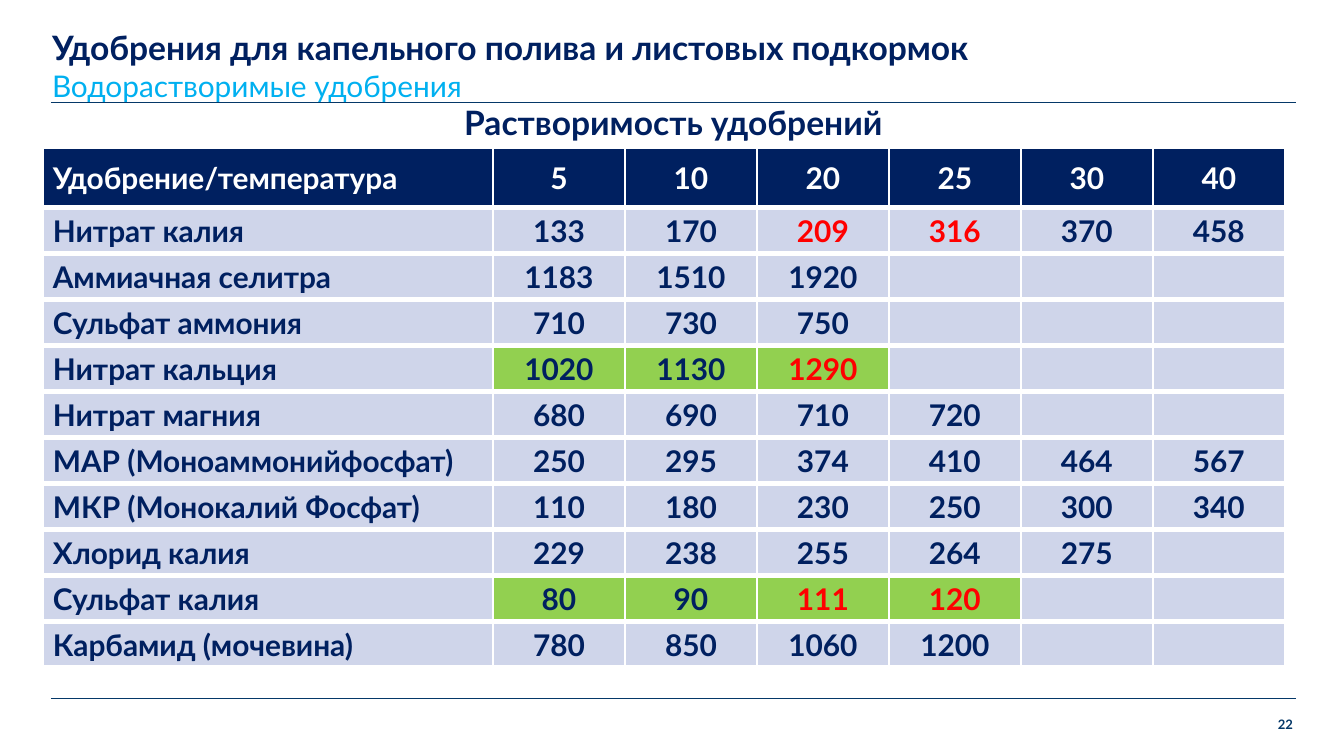
from typing import NamedTuple, Optional

from lxml import etree
from pptx import Presentation
from pptx import util as u
from pptx.dml.color import RGBColor
from pptx.enum import shapes, text
from pptx.oxml.ns import qn

EMU_PER_PX = 914400 / 134.4
FONT = "Lato"

NAVY = RGBColor(0x00, 0x20, 0x60)
LINE_BLUE = RGBColor(0x05, 0x38, 0x68)
SKY = RGBColor(0x00, 0xB0, 0xF0)
WHITE = RGBColor(0xFF, 0xFF, 0xFF)
PALE = RGBColor(0xCF, 0xD5, 0xEA)
GREEN = RGBColor(0x92, 0xD0, 0x50)
RED = RGBColor(0xFF, 0x00, 0x00)


class Box(NamedTuple):
    left: int
    top: int
    width: int
    height: int


class Fertilizer(NamedTuple):
    name: str
    solubility: tuple[int, ...]
    red_values: tuple[int, ...] = ()
    fill: RGBColor = PALE


TEMPERATURES = (5, 10, 20, 25, 30, 40)
FERTILIZERS = (
    Fertilizer("Нитрат калия", (133, 170, 209, 316, 370, 458), (209, 316)),
    Fertilizer("Аммиачная селитра", (1183, 1510, 1920)),
    Fertilizer("Сульфат аммония", (710, 730, 750)),
    Fertilizer("Нитрат кальция", (1020, 1130, 1290), (1290,), GREEN),
    Fertilizer("Нитрат магния", (680, 690, 710, 720)),
    Fertilizer("МАР (Моноаммонийфосфат)", (250, 295, 374, 410, 464, 567)),
    Fertilizer("МКР (Монокалий Фосфат)", (110, 180, 230, 250, 300, 340)),
    Fertilizer("Хлорид калия", (229, 238, 255, 264, 275)),
    Fertilizer("Сульфат калия", (80, 90, 111, 120), (111, 120), GREEN),
    Fertilizer("Карбамид (мочевина)", (780, 850, 1060, 1200)),
)

TITLE_BOX = Box(52, 27, 1243, 83)
CAPTION_BOX = Box(433, 110, 481, 40)
NUMBER_BOX = Box(1274, 716, 19, 19)
RULE_LEFT, RULE_RIGHT = 51, 1296
RULE_TOPS = (102, 698)
TABLE_LEFT, TABLE_TOP = 43, 148
NAME_WIDTH, VALUE_WIDTH = 450, 132
HEADER_HEIGHT, ROW_HEIGHT = 60, 46


def px(length: int) -> u.Emu:
    return u.Emu(round(length * EMU_PER_PX))


def place(box: Box) -> tuple[u.Emu, ...]:
    return tuple(px(length) for length in box)


def format_paragraph(paragraph, size: int, color: RGBColor, bold: bool = True,
                     align: text.PP_ALIGN = text.PP_ALIGN.LEFT) -> None:
    paragraph.alignment = align
    font = paragraph.font
    font.name, font.size, font.bold = FONT, u.Pt(size), bold
    font.color.rgb = color


def clear_margins(frame) -> None:
    frame.margin_left = frame.margin_right = 0
    frame.margin_top = frame.margin_bottom = 0


def add_rule(slide, top: int) -> None:
    line = slide.shapes.add_connector(
        shapes.MSO_CONNECTOR.STRAIGHT, px(RULE_LEFT), px(top), px(RULE_RIGHT), px(top))
    line.line.color.rgb = LINE_BLUE
    line.line.width = u.Pt(0.25)
    etree.SubElement(line._element.spPr, qn("a:effectLst"))


def set_borders(cell, top_width: int) -> None:
    properties = cell._tc.get_or_add_tcPr()
    widths = {"a:lnL": 1, "a:lnR": 1, "a:lnT": top_width, "a:lnB": 3}
    for index, (tag, width) in enumerate(widths.items()):
        border = etree.Element(qn(tag), w=str(u.Pt(width)))
        fill = etree.SubElement(border, qn("a:solidFill"))
        etree.SubElement(fill, qn("a:srgbClr"), val=str(WHITE))
        properties.insert(index, border)


def fill_cell(cell, content: Optional[object], fill: RGBColor, color: RGBColor,
              align: text.PP_ALIGN, top_border: int) -> None:
    cell.margin_left = cell.margin_right = px(10)
    cell.margin_top = cell.margin_bottom = px(5)
    cell.vertical_anchor = text.MSO_ANCHOR.MIDDLE
    cell.fill.solid()
    cell.fill.fore_color.rgb = fill
    set_borders(cell, top_border)
    paragraph = cell.text_frame.paragraphs[0]
    if content is not None:
        paragraph.text = str(content)
    else:
        # An empty cell takes its line height from the end mark
        etree.SubElement(paragraph._p, qn("a:endParaRPr"), sz="1600")
    format_paragraph(paragraph, 16, color, align=align)


def add_solubility_table(slide) -> None:
    columns = 1 + len(TEMPERATURES)
    box = Box(TABLE_LEFT, TABLE_TOP, NAME_WIDTH + VALUE_WIDTH * len(TEMPERATURES),
              HEADER_HEIGHT + ROW_HEIGHT * len(FERTILIZERS))
    table = slide.shapes.add_table(1 + len(FERTILIZERS), columns, *place(box)).table
    table.horz_banding = False
    for index, column in enumerate(table.columns):
        column.width = px(VALUE_WIDTH if index else NAME_WIDTH)
    for index, row in enumerate(table.rows):
        row.height = px(ROW_HEIGHT if index else HEADER_HEIGHT)

    # Header row
    for index, heading in enumerate(("Удобрение/температура", *TEMPERATURES)):
        align = text.PP_ALIGN.CENTER if index else text.PP_ALIGN.LEFT
        fill_cell(table.cell(0, index), heading, NAVY, WHITE, align, 1)

    # One row per fertilizer, blank where no value is known
    for row, fertilizer in enumerate(FERTILIZERS, start=1):
        fill_cell(table.cell(row, 0), fertilizer.name, PALE, NAVY, text.PP_ALIGN.LEFT, 3)
        for column in range(1, columns):
            known = column <= len(fertilizer.solubility)
            value = fertilizer.solubility[column - 1] if known else None
            fill_cell(table.cell(row, column), value, fertilizer.fill if known else PALE,
                      RED if value in fertilizer.red_values else NAVY,
                      text.PP_ALIGN.CENTER, 3)


def main() -> None:
    presentation = Presentation()
    presentation.slide_width, presentation.slide_height = px(1344), px(756)
    slide = presentation.slides.add_slide(presentation.slide_layouts[5])

    # Rules under the title and above the footer
    for top in RULE_TOPS:
        add_rule(slide, top)

    # Title with its second line
    title = slide.shapes.title
    title.left, title.top, title.width, title.height = place(TITLE_BOX)
    frame = title.text_frame
    clear_margins(frame)
    frame.vertical_anchor = text.MSO_ANCHOR.TOP
    frame.auto_size = text.MSO_AUTO_SIZE.NONE
    frame.text = "Удобрения для капельного полива и листовых подкормок\nВодорастворимые удобрения"
    format_paragraph(frame.paragraphs[0], 18, NAVY)
    format_paragraph(frame.paragraphs[1], 16, SKY, bold=False)

    # Slide number
    frame = slide.shapes.add_textbox(*place(NUMBER_BOX)).text_frame
    clear_margins(frame)
    frame.text = "22"
    format_paragraph(frame.paragraphs[0], 7, LINE_BLUE, align=text.PP_ALIGN.RIGHT)

    # Table caption
    frame = slide.shapes.add_textbox(*place(CAPTION_BOX)).text_frame
    frame.word_wrap = False
    frame.auto_size = text.MSO_AUTO_SIZE.SHAPE_TO_FIT_TEXT
    frame.text = "Растворимость удобрений"
    format_paragraph(frame.paragraphs[0], 18, NAVY, align=text.PP_ALIGN.CENTER)
    frame.paragraphs[0].line_spacing = u.Pt(13.5)

    add_solubility_table(slide)
    presentation.save("out.pptx")


if __name__ == "__main__":
    main()
